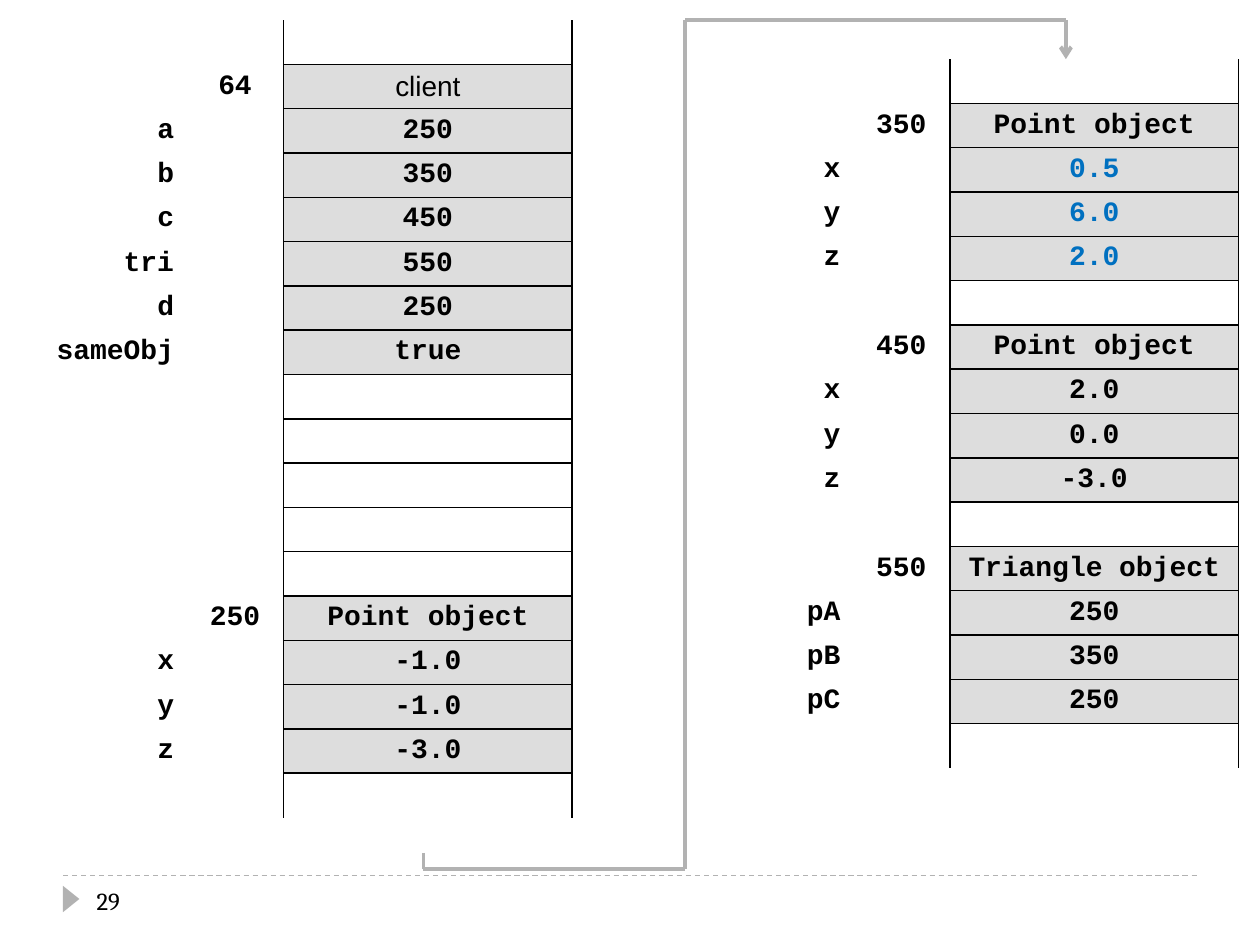
"""Builds a slide of memory diagrams for point and triangle objects."""
import itertools

import pptx
import pptx.dml.color
import pptx.enum.dml
import pptx.enum.shapes
import pptx.enum.text
import pptx.oxml.ns
import pptx.util
from lxml import etree

Pt = pptx.util.Pt
qn = pptx.oxml.ns.qn
ALIGN = pptx.enum.text.PP_ALIGN
MID = pptx.enum.text.MSO_ANCHOR.MIDDLE
COLORS = {"ink": "000000", "gray": "B2B2B2", "cell": "DDDDDD", "blue": "0070C0"}
PLAIN = "{2D5ABB26-0587-4C30-8999-92F81FD0307C}"
COLS = (86.4, 55.4, 165)
ROW = 25.33
BLANK = ("", "", "")


def rgb(name):
    return pptx.dml.color.RGBColor.from_string(COLORS[name])


class Deck:
    def __init__(self):
        self.show = pptx.Presentation()
        self.show.slide_width, self.show.slide_height = Pt(720), Pt(540)
        self.slide = self.show.slides.add_slide(self.show.slide_layouts[6])
        self.shapes = self.slide.shapes

    def label(self, frame, text, size, font, color="ink", bold=False, align=ALIGN.LEFT):
        para = frame.paragraphs[0]
        para.alignment = align
        run = para.add_run()
        run.text = text
        run.font.size, run.font.name, run.font.bold = Pt(size), font, bold
        run.font.color.rgb = rgb(color)

    def text(self, box, text, size, font):
        frame = self.shapes.add_textbox(*map(Pt, box)).text_frame
        frame.word_wrap = True
        frame.vertical_anchor = MID
        self.label(frame, text, size, font)

    def line(self, start, end, width, dash=False, arrow=False):
        kind = pptx.enum.shapes.MSO_CONNECTOR.STRAIGHT
        link = self.shapes.add_connector(kind, *map(Pt, start + end))
        link.line.color.rgb = rgb("gray")
        link.line.width = Pt(width)
        if dash:
            link.line.dash_style = pptx.enum.dml.MSO_LINE.DASH
        if arrow:
            stroke = link._element.spPr.find(qn("a:ln"))
            etree.SubElement(stroke, qn("a:tailEnd"), type="arrow")
        etree.SubElement(link._element.spPr, qn("a:effectLst"))

    def mark(self, box, turn):
        kind = pptx.enum.shapes.MSO_SHAPE.ISOSCELES_TRIANGLE
        shape = self.shapes.add_shape(kind, *map(Pt, box))
        shape.rotation = turn
        shape.shadow.inherit = False
        shape.fill.solid()
        shape.fill.fore_color.rgb = rgb("gray")
        shape.line.fill.background()

    def edge(self, cell, sides):
        props = cell._tc.get_or_add_tcPr()
        for side in sides:
            line = etree.SubElement(props, qn("a:ln" + side), w=str(Pt(1)))
            fill = etree.SubElement(line, qn("a:solidFill"))
            etree.SubElement(fill, qn("a:srgbClr"), val=COLORS["ink"])

    def table(self, left, top, rows, blue=()):
        size = (sum(COLS), ROW * len(rows))
        grid = self.shapes.add_table(len(rows), 3, *map(Pt, (left, top) + size)).table
        grid.first_row = grid.horz_banding = False
        grid._tbl.tblPr.find(qn("a:tableStyleId")).text = PLAIN
        for col, width in zip(grid.columns, COLS):
            col.width = Pt(width)
        last = len(rows) - 1
        for i, row in enumerate(rows):
            grid.rows[i].height = Pt(ROW)
            sides = ["L", "R"] + ["T"] * (i > 0) + ["B"] * (i < last)
            for j, text in enumerate(row):
                cell = grid.cell(i, j)
                cell.margin_top = cell.margin_bottom = 0
                cell.vertical_anchor = MID
                self.edge(cell, ([], ["R"], sides)[j])
                if j == 2 and text:
                    cell.fill.solid()
                    cell.fill.fore_color.rgb = rgb("cell")
                else:
                    cell.fill.background()
                if text:
                    code = text != "client"
                    self.label(cell.text_frame, text, 16,
                               "Courier New" if code else "Arial",
                               "blue" if j == 2 and i in blue else "ink", code,
                               ALIGN.CENTER if j else ALIGN.RIGHT)


def block(place, title, **fields):
    return [("", place, title)] + [(name, "", val) for name, val in fields.items()]


def point(place, x, y, z):
    return block(place, "Point object", x=x, y=y, z=z)


def main():
    deck = Deck()
    deck.line((36, 500.4), (684, 500.4), 0.75, dash=True)
    deck.mark((33.1, 509, 15.1, 9.4), 90)
    deck.text((48.2, 500.4, 156.2, 28.8), "29", 14, "Cambria")

    client = block("64", "client", a="250", b="350", c="450", tri="550",
                   d="250", sameObj="true")
    deck.table(20.2, 11.5, [BLANK] + client + [BLANK] * 5
               + point("250", "-1.0", "-1.0", "-3.0") + [BLANK])
    triple = block("550", "Triangle object", pA="250", pB="350", pC="250")
    deck.table(401, 33.8, [BLANK] + point("350", "0.5", "6.0", "2.0") + [BLANK]
               + point("450", "2.0", "0.0", "-3.0") + [BLANK] + triple + [BLANK],
               blue=(2, 3, 4))

    route = [(242, 487.4), (242, 496.8), (391.7, 496.8), (391.7, 11.5),
             (609.1, 11.5), (609.1, 33.8)]
    for start, end in itertools.pairwise(route):
        deck.line(start, end, 2.25, arrow=end == route[-1])
    deck.show.save("out.pptx")


if __name__ == "__main__":
    main()
